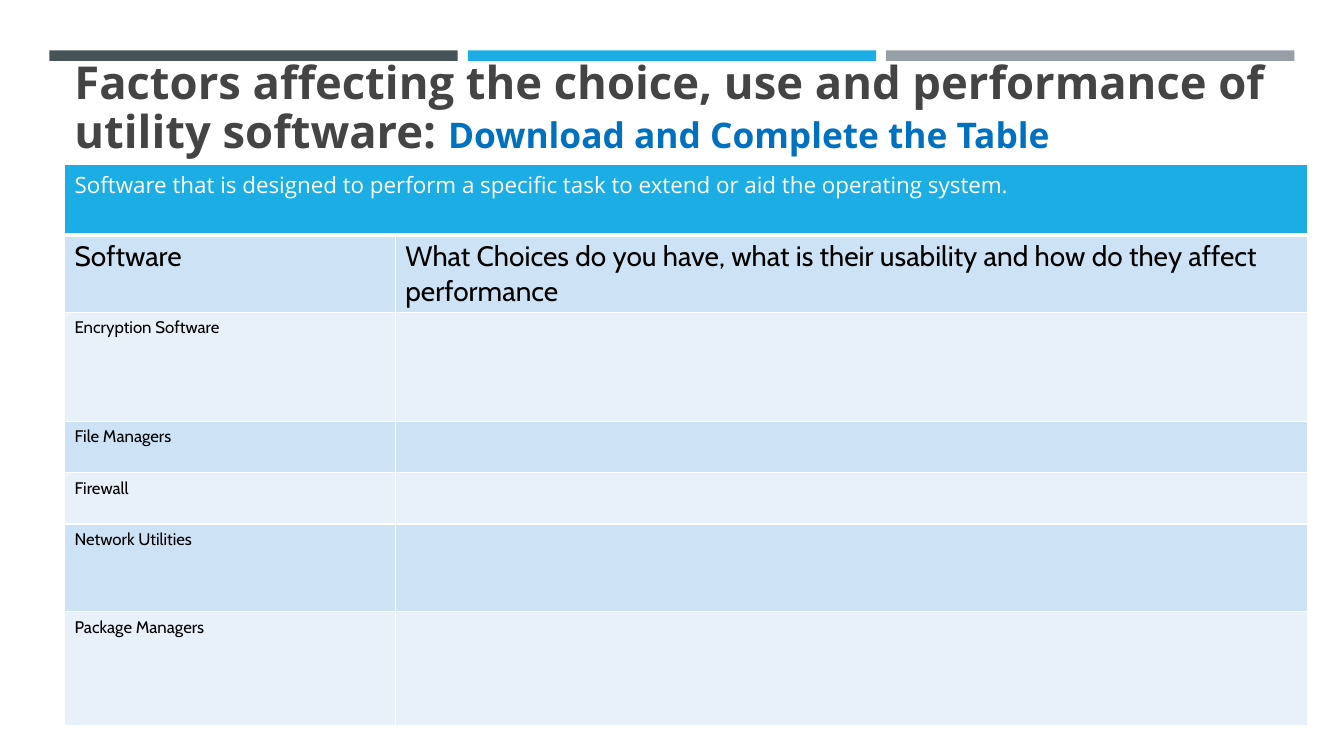
from dataclasses import dataclass

import pptx
import pptx.dml.color
import pptx.enum.shapes
import pptx.enum.text
import pptx.oxml
import pptx.oxml.ns
import pptx.util

COLOURS = {
    "slate": "465359",
    "sky": "1CADE4",
    "grey": "969FA7",
    "title": "444444",
    "task": "0070C0",
    "band_dark": "CDE3F5",
    "band_light": "E8F1FA",
    "white": "FFFFFF",
    "black": "000000",
}
SLIDE_WIDTH = pptx.util.Inches(13.33)
SLIDE_HEIGHT = pptx.util.Inches(7.5)


@dataclass
class Bar:
    column: int
    colour: str


@dataclass
class TableRow:
    height: float  # percent of the slide height
    texts: tuple[str, ...]
    size: float
    fill: str
    font: str = "Cabin"
    colour: str = "black"
    bottom_line: float = 1


BARS = [Bar(0, "slate"), Bar(1, "sky"), Bar(2, "grey")]
COLUMN_WIDTHS = [24.61, 67.89]  # percent of the slide width
ROWS = [
    TableRow(9.33, ("Software that is designed to perform a specific task to extend "
                    "or aid the operating system.",),
             16, "sky", "Open Sans", "white", 3),
    TableRow(10.27, ("Software", "What Choices do you have, what is their usability "
                     "and how do they affect performance"), 20, "band_dark"),
    TableRow(14.4, ("Encryption Software",), 12, "band_light"),
    TableRow(6.8, ("File Managers",), 12, "band_dark"),
    TableRow(6.8, ("Firewall",), 12, "band_light"),
    TableRow(11.6, ("Network Utilities",), 12, "band_dark"),
    TableRow(15.07, ("Package Managers",), 12, "band_light"),
]


def across(percent: float) -> int:
    return int(SLIDE_WIDTH * percent / 100)


def down(percent: float) -> int:
    return int(SLIDE_HEIGHT * percent / 100)


def rgb(name: str) -> pptx.dml.color.RGBColor:
    return pptx.dml.color.RGBColor.from_string(COLOURS[name])


def draw_bar(slide, bar: Bar) -> None:
    shape = slide.shapes.add_shape(
        pptx.enum.shapes.MSO_SHAPE.RECTANGLE,
        across(3.68 + 31.13 * bar.column), down(6.67), across(30.38), down(1.4))
    shape.shadow.inherit = False
    shape.fill.solid()
    shape.fill.fore_color.rgb = rgb(bar.colour)
    shape.line.fill.background()


def draw_title(slide) -> None:
    box = slide.shapes.add_textbox(across(4.8), down(7.2), across(90.47), down(14.4))
    frame = box.text_frame
    frame.word_wrap = True
    frame.vertical_anchor = pptx.enum.text.MSO_ANCHOR.BOTTOM
    paragraph = frame.paragraphs[0]
    paragraph.line_spacing = 0.9
    paragraph.font.name = "Open Sans"
    paragraph.font.bold = True
    for text, size, colour in (
        ("Factors affecting the choice, use and performance of utility software: ",
         32.4, "title"),
        ("Download and Complete the Table", 25.2, "task"),
    ):
        run = paragraph.add_run()
        run.text = text
        run.font.size = pptx.util.Pt(size)
        run.font.color.rgb = rgb(colour)


def add_borders(cell, bottom_line: float, top_line: float) -> None:
    properties = cell._tc.get_or_add_tcPr()
    for side, width in (("L", 1), ("R", 1), ("T", top_line), ("B", bottom_line)):
        properties.append(pptx.oxml.parse_xml(
            f'<a:ln{side} {pptx.oxml.ns.nsdecls("a")} w="{pptx.util.Pt(width)}">'
            f'<a:solidFill><a:srgbClr val="{COLOURS["white"]}"/></a:solidFill>'
            f'</a:ln{side}>'))


def draw_table(slide) -> None:
    table = slide.shapes.add_table(
        len(ROWS), len(COLUMN_WIDTHS), across(4.8), down(21.73),
        across(sum(COLUMN_WIDTHS)), down(sum(row.height for row in ROWS))).table
    for column, width in zip(table.columns, COLUMN_WIDTHS):
        column.width = across(width)

    top_line = 1
    for row_index, row in enumerate(ROWS):
        table.rows[row_index].height = down(row.height)
        for column_index in range(len(COLUMN_WIDTHS)):
            cell = table.cell(row_index, column_index)
            add_borders(cell, row.bottom_line, top_line)
            cell.fill.solid()
            cell.fill.fore_color.rgb = rgb(row.fill)
            if column_index < len(row.texts):
                cell.text = row.texts[column_index]
            font = cell.text_frame.paragraphs[0].font
            font.name = row.font
            font.size = pptx.util.Pt(row.size)
            font.bold = False
            font.color.rgb = rgb(row.colour)
        top_line = row.bottom_line

    # The definition spans the full width
    table.cell(0, 0).merge(table.cell(0, len(COLUMN_WIDTHS) - 1))


def main() -> None:
    presentation = pptx.Presentation()
    presentation.slide_width = SLIDE_WIDTH
    presentation.slide_height = SLIDE_HEIGHT
    slide = presentation.slides.add_slide(presentation.slide_layouts[6])

    # Coloured bars along the top
    for bar in BARS:
        draw_bar(slide, bar)

    # Heading and worksheet table
    draw_title(slide)
    draw_table(slide)

    presentation.save("out.pptx")


if __name__ == "__main__":
    main()
